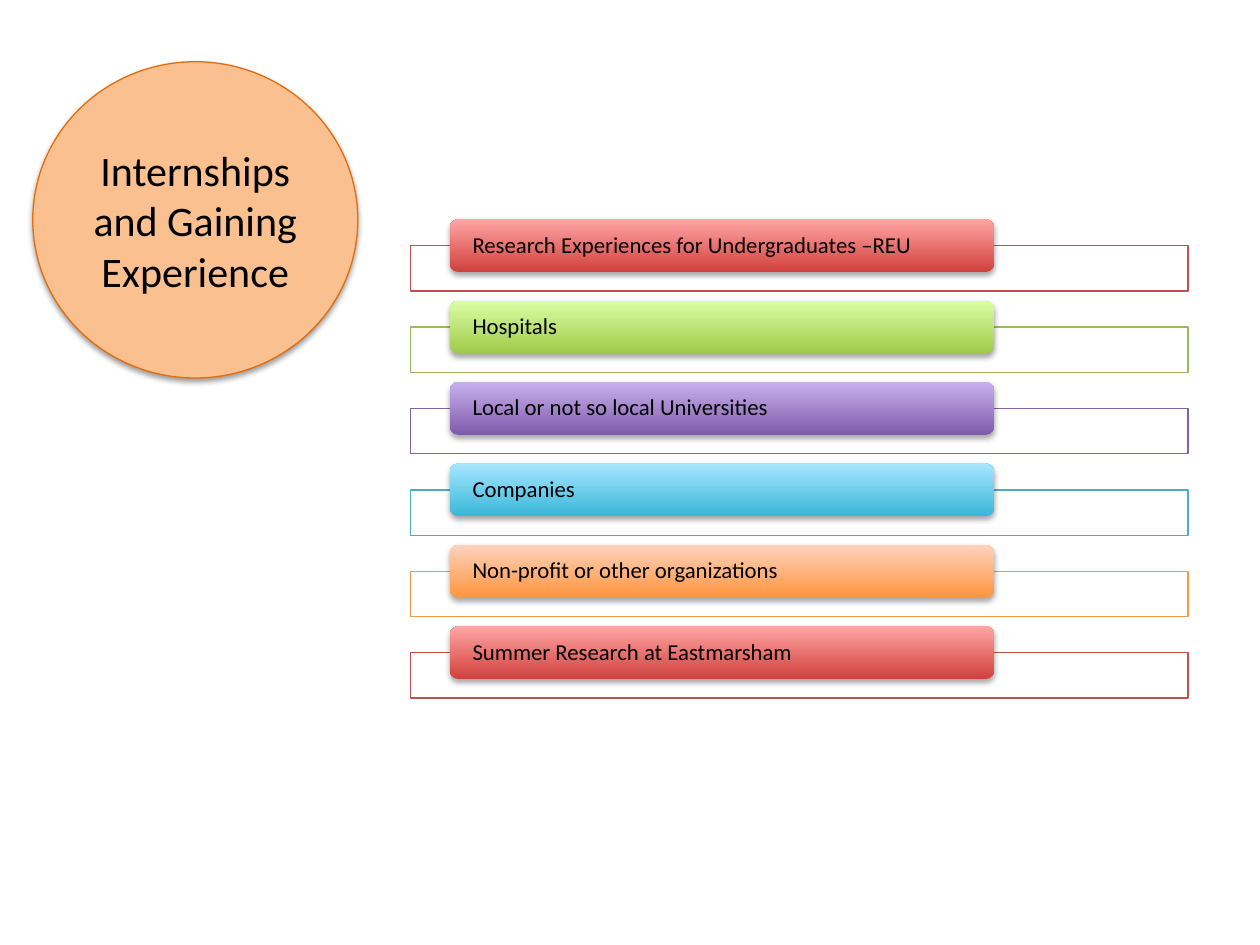
from lxml import etree
from pptx import Presentation
from pptx.dml.color import RGBColor
from pptx.enum.shapes import MSO_SHAPE
from pptx.enum.text import MSO_ANCHOR, PP_ALIGN
from pptx.oxml.ns import qn
from pptx.util import Inches, Pt

OVAL = MSO_SHAPE.OVAL
RECT = MSO_SHAPE.RECTANGLE
ROUNDED = MSO_SHAPE.ROUNDED_RECTANGLE
MIDDLE = MSO_ANCHOR.MIDDLE
LEFT, CENTER = PP_ALIGN.LEFT, PP_ALIGN.CENTER

FONT = "Calibri"
BLACK = RGBColor(0x00, 0x00, 0x00)
WHITE = RGBColor(0xFF, 0xFF, 0xFF)
PEACH = RGBColor(0xFA, 0xC0, 0x90)
DARK_ORANGE = RGBColor(0xE4, 0x6C, 0x0A)
RED = (RGBColor(0xC0, 0x50, 0x4D), RGBColor(0xD1, 0x40, 0x3C), RGBColor(0xFF, 0xA6, 0xA5))
GREEN = (RGBColor(0x9B, 0xBB, 0x59), RGBColor(0xA0, 0xCA, 0x4A), RGBColor(0xDA, 0xFF, 0xA5))
PURPLE = (RGBColor(0x80, 0x64, 0xA2), RGBColor(0x7F, 0x5B, 0xAB), RGBColor(0xC8, 0xB0, 0xED))
BLUE = (RGBColor(0x4B, 0xAC, 0xC6), RGBColor(0x39, 0xB7, 0xD8), RGBColor(0xA7, 0xE6, 0xFF))
ORANGE = (RGBColor(0xF7, 0x96, 0x46), RGBColor(0xFF, 0x95, 0x3E), RGBColor(0xFF, 0xD2, 0xBD))

OPTIONS = [
    ("Research Experiences for Undergraduates –REU", RED),
    ("Hospitals", GREEN),
    ("Local or not so local Universities", PURPLE),
    ("Companies", BLUE),
    ("Non-profit or other organizations", ORANGE),
    ("Summer Research at Eastmarsham", RED),
]
FIRST_TOP = 1.74
ROW_PITCH = 0.646


def add_shape(slide, kind, left, top, width, height):
    s = slide.shapes.add_shape(kind, Inches(left), Inches(top), Inches(width), Inches(height))
    s.shadow.inherit = False
    return s


def set_outline(s, color):
    s.line.color.rgb = color
    s.line.width = Pt(0.75)


def add_shadow(s, distance, opacity):
    effects = s._element.spPr.find(qn("a:effectLst"))
    shadow = etree.SubElement(effects, qn("a:outerShdw"), blurRad=str(Pt(3.1)),
                              dist=str(Pt(distance)), dir="5400000", rotWithShape="0")
    color = etree.SubElement(shadow, qn("a:srgbClr"), val=str(BLACK))
    etree.SubElement(color, qn("a:alpha"), val=str(opacity * 1000))


def set_text(s, text, size, align):
    tf = s.text_frame
    tf.word_wrap = True
    tf.vertical_anchor = MIDDLE
    p = tf.paragraphs[0]
    p.text = text
    p.alignment = align
    p.font.name = FONT
    p.font.size = Pt(size)
    p.font.color.rgb = BLACK
    return tf


def add_title(slide):
    s = add_shape(slide, OVAL, 0.26, 0.49, 2.58, 2.51)
    s.fill.solid()
    s.fill.fore_color.rgb = PEACH
    set_outline(s, DARK_ORANGE)
    add_shadow(s, 1.6, 38)
    set_text(s, "Internships and Gaining Experience", 24, CENTER)


def add_frame(slide, top, color):
    s = add_shape(slide, RECT, 3.26, top, 6.17, 0.36)
    s.fill.solid()
    s.fill.fore_color.rgb = WHITE
    fill_color = s._element.spPr.find(qn("a:solidFill"))[0]
    etree.SubElement(fill_color, qn("a:alpha"), val="90000")
    set_outline(s, color)


def add_label(slide, top, text, dark, light):
    s = add_shape(slide, ROUNDED, 3.57, top, 4.32, 0.42)
    s.fill.gradient()
    s.fill.gradient_angle = 90
    for stop, color in zip(s.fill.gradient_stops, (dark, light)):
        stop.color.rgb = color
    s.line.fill.background()
    add_shadow(s, 1.8, 35)
    tf = set_text(s, text, 13, LEFT)
    tf.margin_left = tf.margin_right = Inches(0.16)
    tf.margin_top = tf.margin_bottom = 0
    tf.paragraphs[0].line_spacing = 0.9


def main():
    prs = Presentation()
    prs.slide_width, prs.slide_height = Inches(10), Inches(7.5)
    slide = prs.slides.add_slide(prs.slide_layouts[6])
    add_title(slide)
    for row, (text, (outline, dark, light)) in enumerate(OPTIONS):
        top = FIRST_TOP + row * ROW_PITCH
        add_frame(slide, top + 0.21, outline)
        add_label(slide, top, text, dark, light)
    prs.save("out.pptx")


if __name__ == "__main__":
    main()
